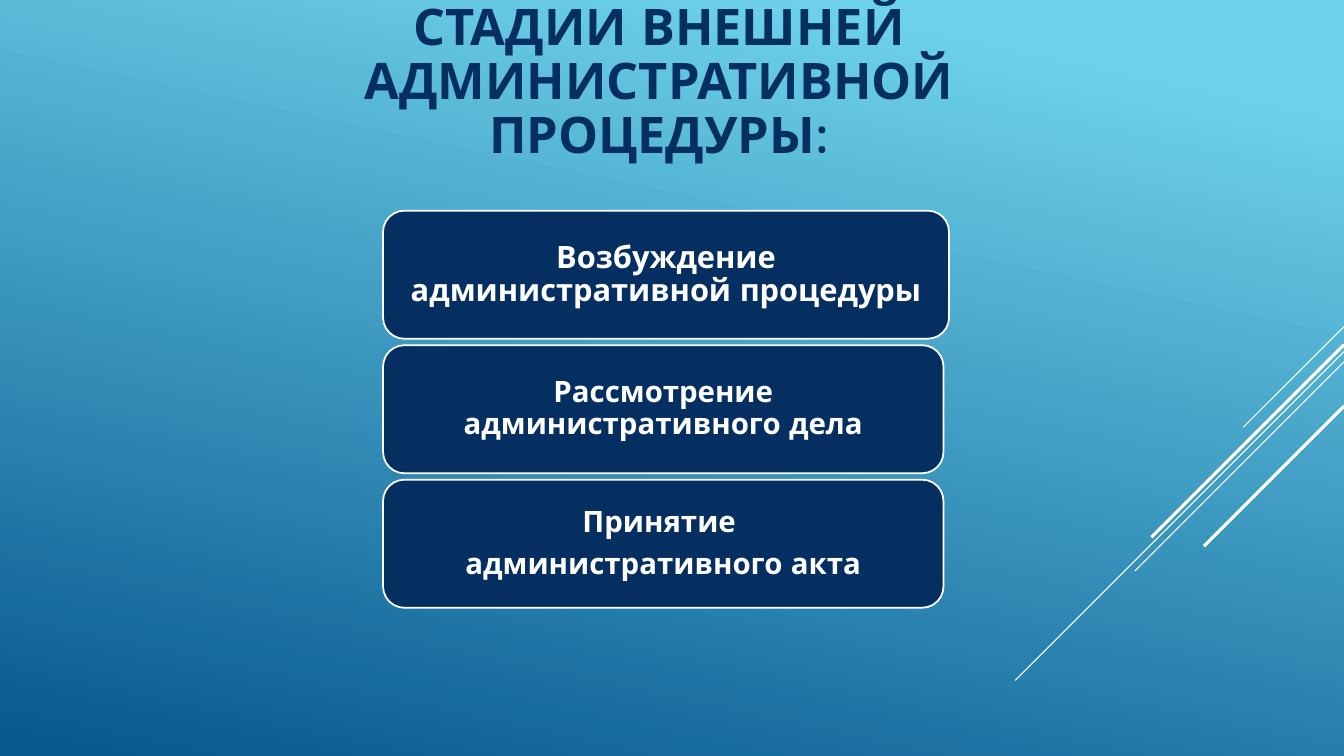
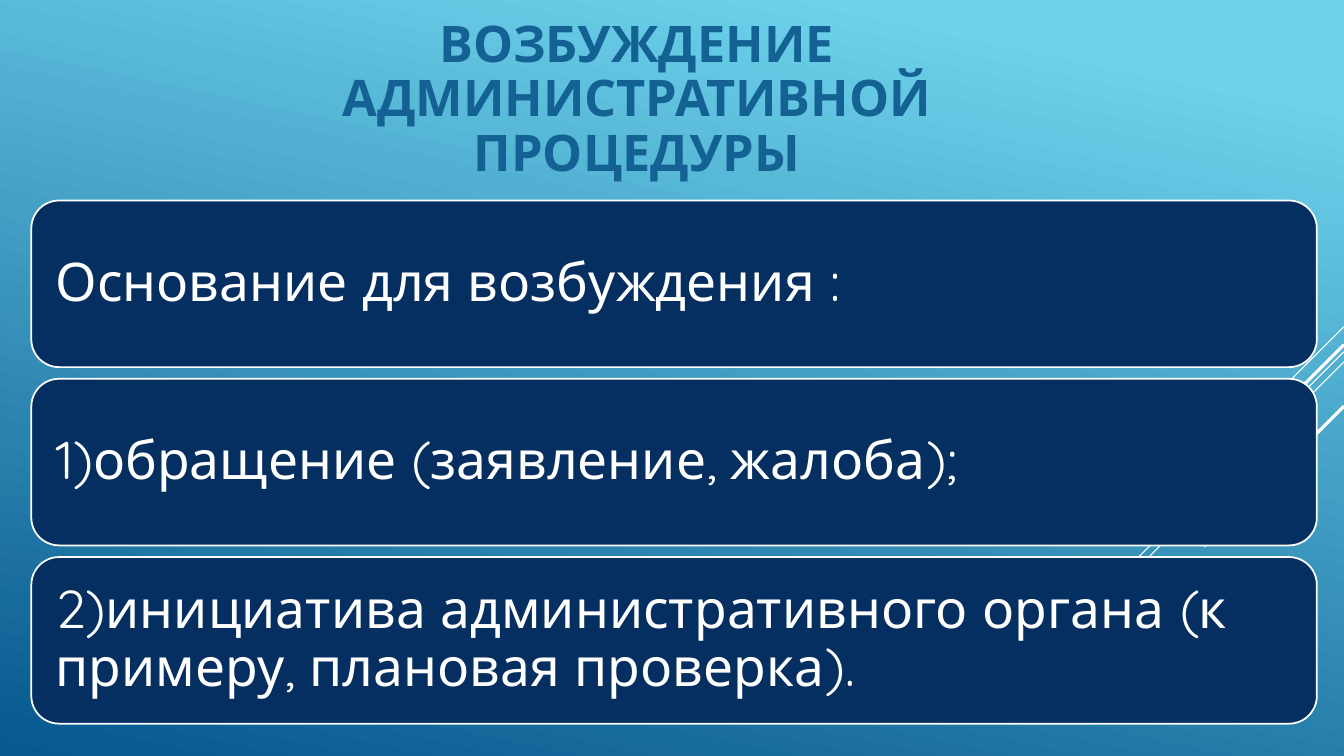
from lxml.etree import SubElement
from pptx import Presentation
from pptx.dml.color import RGBColor
from pptx.enum.shapes import MSO_CONNECTOR, MSO_SHAPE
from pptx.enum.text import MSO_ANCHOR, PP_ALIGN
from pptx.oxml.ns import qn
from pptx.util import Inches, Pt

WIDE, HIGH = Inches(13.33), Inches(7.5)
NAVY = RGBColor(0x05, 0x2F, 0x61)
BLUE = RGBColor(0x14, 0x61, 0x94)
SKY = RGBColor(0x6E, 0xD2, 0xEB)
DEEP = RGBColor(0x06, 0x58, 0x8E)
WHITE = RGBColor(0xFF, 0xFF, 0xFF)
FACE = "Quicksand"

RAYS = [(43.2, 13.33, 0.75), (46.53, 43.47, 0.75), (47.87, 27.67, 0.75),
        (45.6, 25.47, 2.25), (53.73, 18.53, 2.25)]

STAGES = [
    (["Возбуждение административной процедуры"], 22, 1.01),
    (["Рассмотрение административного дела"], 21, 1),
    (["Принятие ", "административного акта"], 21, 1),
]
GROUNDS = [([line], 38, 1) for line in (
    "Основание для возбуждения :",
    "1)обращение (заявление, жалоба);",
    "2)инициатива административного органа (к примеру, плановая проверка).",
)]


def apply(item, form):
    for name, value in form.items():
        setattr(item, name, value)


def share(x, y, w, h):
    return [round(part * side / 100)
            for part, side in zip((x, y, w, h), (WIDE, HIGH) * 2)]


def write(frame, lines, size, color, bold, align, pad, after=0):
    across, down = map(Inches, pad)
    apply(frame, {"word_wrap": True, "vertical_anchor": MSO_ANCHOR.MIDDLE,
                  "margin_left": across, "margin_right": across,
                  "margin_top": down, "margin_bottom": down})
    for spot, line in enumerate(lines):
        para = frame.add_paragraph() if spot else frame.paragraphs[0]
        apply(para, {"alignment": align, "line_spacing": 0.9,
                     "space_after": Pt(after)})
        run = para.add_run()
        run.text = line
        apply(run.font, {"name": FACE, "size": Pt(size), "bold": bold})
        run.font.color.rgb = color


def paint(slide):
    fill = slide.background.fill
    fill.gradient()
    fill.gradient_angle = 258
    for stop, color, place in zip(fill.gradient_stops, (SKY, DEEP), (0.1, 1)):
        stop.color.rgb = color
        stop.position = place


def fan(slide):
    for start, drop, weight in RAYS:
        top, step = (round(HIGH * part / 100) for part in (start, drop))
        ray = slide.shapes.add_connector(
            MSO_CONNECTOR.STRAIGHT, WIDE, top, WIDE - step, top + step)
        ray.line.color.rgb = WHITE
        ray.line.width = Pt(weight)
        SubElement(ray._element.spPr, qn("a:effectLst"))


def head(slide, box, text, color):
    label = slide.shapes.add_textbox(*box)
    write(label.text_frame, [text], 36, color, True, PP_ALIGN.CENTER,
          (0.1, 0.05))


def stack(slide, box, rows, gap, bold, align, pad):
    left, top, width, height = box
    tall = height / (len(rows) + gap * (len(rows) - 1))
    for spot, (lines, size, part) in enumerate(rows):
        card = slide.shapes.add_shape(
            MSO_SHAPE.ROUNDED_RECTANGLE, left,
            round(top + spot * tall * (1 + gap)),
            round(width * part), round(tall))
        card.shadow.inherit = False
        card.fill.solid()
        card.fill.fore_color.rgb = NAVY
        card.line.color.rgb = WHITE
        card.line.width = Pt(1.25)
        write(card.text_frame, lines, size, WHITE, bold, align, pad,
              size * 0.35)


def build(deck, title, color, crown, body, rows, gap, bold, align, pad):
    slide = deck.slides.add_slide(deck.slide_layouts[6])
    paint(slide)
    fan(slide)
    head(slide, share(*crown), title, color)
    stack(slide, share(*body), rows, gap, bold, align, pad)


def main():
    deck = Presentation()
    apply(deck, {"slide_width": WIDE, "slide_height": HIGH})
    build(deck, "СТАДИИ ВНЕШНЕЙ АДМИНИСТРАТИВНОЙ ПРОЦЕДУРЫ:", NAVY,
          (14.03, 0, 70, 22), (28.5, 27.87, 41.7, 52.53),
          STAGES, 0.05, True, PP_ALIGN.CENTER, (0.09, 0.04))
    build(deck, "ВОЗБУЖДЕНИЕ АДМИНИСТРАТИВНОЙ ПРОЦЕДУРЫ", BLUE,
          (12.38, 2.27, 70, 22), (2.33, 26.53, 95.65, 69.2),
          GROUNDS, 0.07, False, PP_ALIGN.LEFT, (0.16, 0.16))
    deck.save("out.pptx")


if __name__ == "__main__":
    main()
